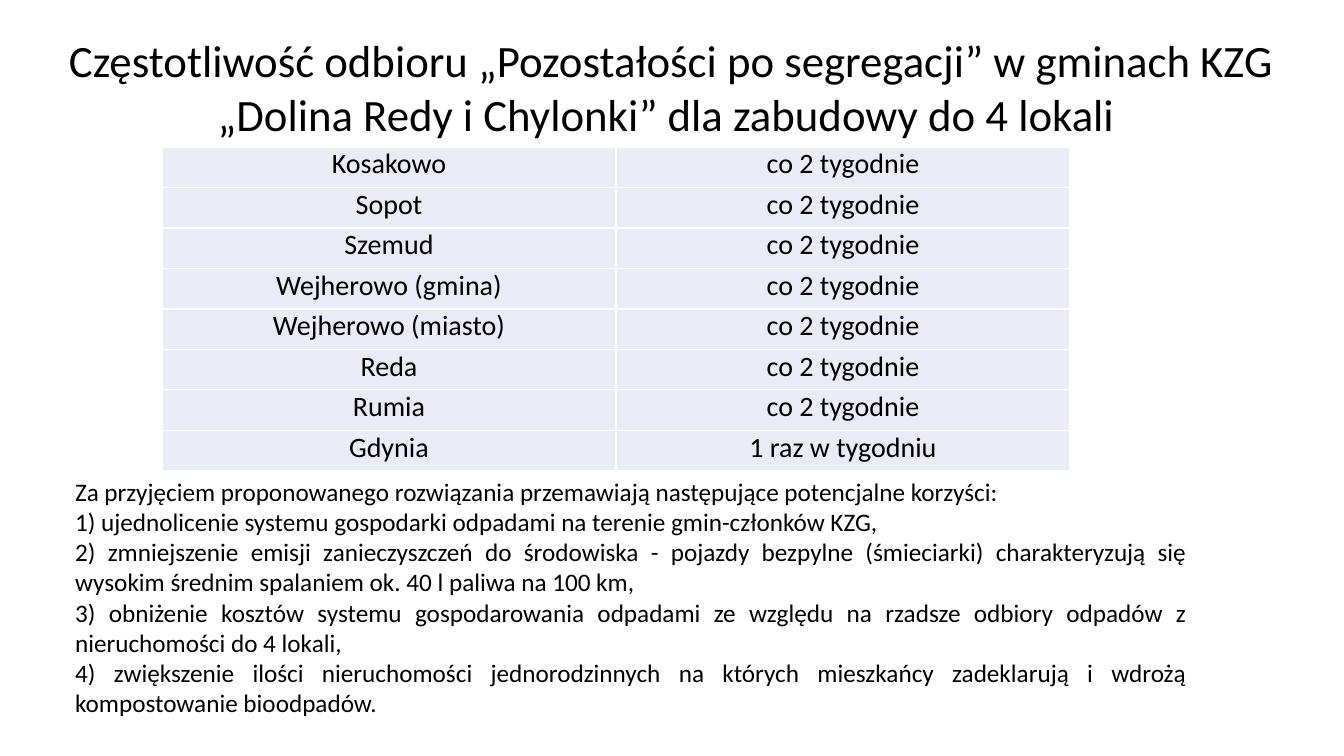
import pptx
import pptx.util
import pptx.dml.color
import pptx.enum.text
import pptx.oxml
import pptx.oxml.ns

SCALE = 914400 / 100.8
ALIGN = pptx.enum.text.PP_ALIGN
INK, PAPER, CELL = "000000", "FFFFFF", "E9EBF5"

TITLE = ("Częstotliwość odbioru „Pozostałości po segregacji” w gminach KZG "
         "„Dolina Redy i Chylonki” dla zabudowy do 4 lokali ")
TOWNS = ["Kosakowo", "Sopot", "Szemud", "Wejherowo (gmina)",
         "Wejherowo (miasto)", "Reda", "Rumia"]
ROWS = [(town, "co 2 tygodnie") for town in TOWNS] + [("Gdynia", "1 raz w tygodniu")]
GAINS = [
    "Za przyjęciem proponowanego rozwiązania przemawiają następujące potencjalne korzyści:",
    "1) ujednolicenie systemu gospodarki odpadami na terenie gmin-członków KZG,",
    "2) zmniejszenie emisji zanieczyszczeń do środowiska - pojazdy bezpylne (śmieciarki) "
    "charakteryzują się wysokim średnim spalaniem ok. 40 l paliwa na 100 km,",
    "3) obniżenie kosztów systemu gospodarowania odpadami ze względu na rzadsze odbiory "
    "odpadów z nieruchomości do 4 lokali,",
    "4) zwiększenie ilości nieruchomości jednorodzinnych na których mieszkańcy zadeklarują "
    "i wdrożą kompostowanie bioodpadów.",
]


def px(n):
    return pptx.util.Emu(round(n * SCALE))


def color(code):
    return pptx.dml.color.RGBColor.from_string(code)


def assign(item, values):
    for name, value in values.items():
        setattr(item, name, value)


def style(para, size, align):
    assign(para, {"alignment": align, "space_before": pptx.util.Pt(0)})
    assign(para.font, {"size": pptx.util.Pt(size), "name": "Calibri"})
    para.font.color.rgb = color(INK)


def fill_text(shape, box, lines, size, align):
    """Place a placeholder and give it plain, unbulleted paragraphs."""
    assign(shape, dict(zip(("left", "top", "width", "height"), map(px, box))))
    frame = shape.text_frame
    frame.text = "\n".join(lines)
    assign(frame, {"word_wrap": True,
                   "auto_size": pptx.enum.text.MSO_AUTO_SIZE.SHAPE_TO_FIT_TEXT,
                   "vertical_anchor": pptx.enum.text.MSO_ANCHOR.TOP})
    for para in frame.paragraphs:
        props = para._p.get_or_add_pPr()
        props.set("marL", "0")
        props.set("indent", "0")
        pptx.oxml.ns.qn("a:buNone")
        props.append(pptx.oxml.parse_xml(
            f'<a:buNone {pptx.oxml.ns.nsdecls("a")}/>'))
        style(para, size, align)


def edge(cell):
    """Draw a thin line on all four sides of a cell."""
    props = cell._tc.get_or_add_tcPr()
    for spot, side in enumerate(("lnL", "lnR", "lnT", "lnB")):
        props.insert(spot, pptx.oxml.parse_xml(
            f'<a:{side} {pptx.oxml.ns.nsdecls("a")} w="12700"><a:solidFill>'
            f'<a:srgbClr val="{PAPER}"/></a:solidFill></a:{side}>'))


def add_grid(slide, box, rows):
    grid = slide.shapes.add_table(len(rows), len(rows[0]), *map(px, box)).table
    assign(grid, {"first_row": False, "horz_banding": False})
    for r, row in enumerate(rows):
        for c, text in enumerate(row):
            cell = grid.cell(r, c)
            cell.text = text
            assign(cell, {"margin_left": px(7), "margin_right": px(7),
                          "margin_top": 0, "margin_bottom": 0})
            cell.fill.solid()
            cell.fill.fore_color.rgb = color(CELL)
            edge(cell)
            style(cell.text_frame.paragraphs[0], 20, ALIGN.CENTER)


def main():
    deck = pptx.Presentation()
    assign(deck, {"slide_width": px(1344), "slide_height": px(756)})
    slide = deck.slides.add_slide(deck.slide_layouts[1])
    title, body = slide.placeholders
    fill_text(title, (31, 28, 1281, 119), [TITLE], 32, ALIGN.CENTER)
    add_grid(slide, (162, 147, 908, 324), ROWS)
    fill_text(body, (65, 471, 1132, 254), GAINS, 18, ALIGN.JUSTIFY)
    deck.save("out.pptx")


if __name__ == "__main__":
    main()
